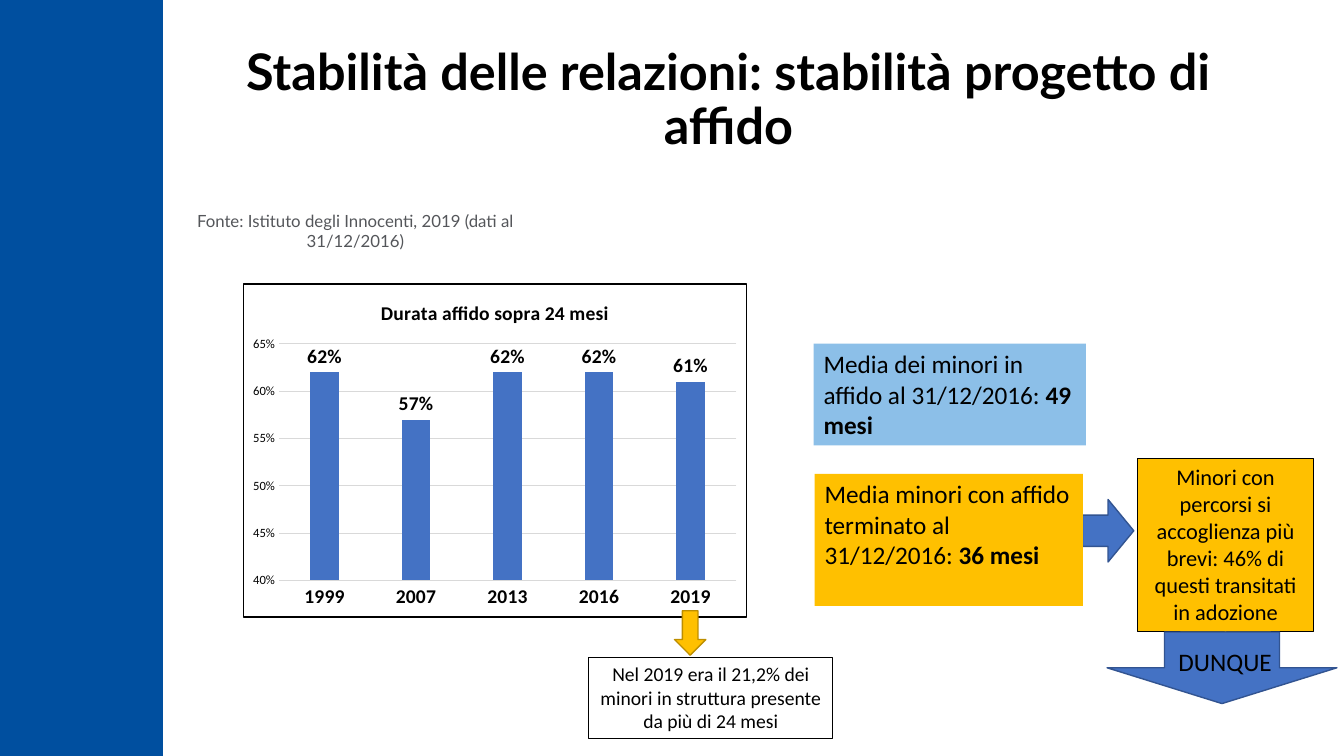
from dataclasses import dataclass

from lxml import etree
from pptx import Presentation
from pptx.chart.data import CategoryChartData
from pptx.dml.color import RGBColor
from pptx.enum.chart import XL_CHART_TYPE as ChartType
from pptx.enum.chart import XL_LABEL_POSITION as LabelPos
from pptx.enum.chart import XL_TICK_MARK as Tick
from pptx.enum.shapes import MSO_SHAPE as Preset
from pptx.enum.text import MSO_ANCHOR as Anchor
from pptx.enum.text import PP_ALIGN as Align
from pptx.oxml import parse_xml
from pptx.oxml.ns import nsdecls, qn
from pptx.util import Inches, Pt


@dataclass(frozen=True)
class Theme:
    band: str = "004F9F"
    white: str = "FFFFFF"
    ink: str = "000000"
    muted: str = "54565A"
    grid: str = "D9D9D9"
    blue: str = "4472C4"
    blue_edge: str = "325491"
    sky: str = "8CBFE8"
    amber: str = "FFC000"
    amber_edge: str = "BD8E00"
    heading_face: str = "Lato"
    body_face: str = "Calibri"
    title: int = 36
    large: int = 18
    medium: int = 16
    label: int = 14
    source: int = 12
    axis: int = 9


THEME = Theme()


def style_font(font, size, color=THEME.ink, face=THEME.body_face, bold=False):
    font.size, font.name, font.bold = Pt(size), face, bold
    font.color.rgb = RGBColor.from_string(color)


def add_block(slide, box, preset=Preset.RECTANGLE, fill=None, edge=None, weight=1):
    block = slide.shapes.add_shape(preset, *map(Inches, box))
    block.shadow.inherit = False
    if fill:
        block.fill.solid()
        block.fill.fore_color.rgb = RGBColor.from_string(fill)
    else:
        block.fill.background()
    if edge:
        block.line.color.rgb = RGBColor.from_string(edge)
        block.line.width = Pt(weight)
    else:
        block.line.fill.background()
    return block


def write(shape, text, size, strong="", align=Align.LEFT, anchor=Anchor.TOP, **font):
    """Write one paragraph, with an optional bold ending."""
    frame = shape.text_frame
    frame.word_wrap = True
    frame.vertical_anchor = anchor
    paragraph = frame.paragraphs[0]
    paragraph.alignment = align
    paragraph.add_run().text = text
    style_font(paragraph.font, size, **font)
    if strong:
        ending = paragraph.add_run()
        ending.text = strong
        ending.font.bold = True
    return paragraph


def add_label(slide, box, text, size, **options):
    return write(slide.shapes.add_textbox(*map(Inches, box)), text, size, **options)


def add_header(slide, left, top, width):
    heading = add_label(slide, (left, top, width, 1.69),
                        "Stabilità delle relazioni: stabilità progetto di affido",
                        THEME.title, align=Align.CENTER, anchor=Anchor.MIDDLE,
                        face=THEME.heading_face, bold=True)
    heading.line_spacing = 0.9
    add_label(slide, (left, top + 1.88, 3.65, 0.5),
              "Fonte: Istituto degli Innocenti, 2019 (dati al 31/12/2016)",
              THEME.source, align=Align.CENTER, color=THEME.muted,
              face=THEME.heading_face)


def frame_chart(chart):
    """Give the chart a white ground, a black border and a fixed plot area."""
    space = chart.element
    space.find(qn("c:chart")).addnext(parse_xml(
        f'<c:spPr {nsdecls("c", "a")}>'
        f'<a:solidFill><a:srgbClr val="{THEME.white}"/></a:solidFill>'
        f'<a:ln w="12700"><a:solidFill><a:srgbClr val="{THEME.ink}"/></a:solidFill></a:ln>'
        '</c:spPr>'))
    plot_area = space.find(".//" + qn("c:plotArea"))
    layout = plot_area.find(qn("c:layout"))
    if layout is None:
        layout = etree.Element(qn("c:layout"))
        plot_area.insert(0, layout)
    manual = etree.SubElement(layout, qn("c:manualLayout"))
    places = {"layoutTarget": "inner", "xMode": "edge", "yMode": "edge",
              "x": "0.07", "y": "0.18", "w": "0.91", "h": "0.71"}
    for tag, value in places.items():
        etree.SubElement(manual, qn("c:" + tag)).set("val", value)


def add_duration_chart(slide, box):
    data = CategoryChartData(number_format="0%")
    data.categories = ["1999", "2007", "2013", "2016", "2019"]
    data.add_series("Series 1", (0.62, 0.57, 0.62, 0.62, 0.61))
    chart = slide.shapes.add_chart(ChartType.COLUMN_CLUSTERED,
                                   *map(Inches, box), data).chart
    style_font(chart.font, 10)
    chart.has_legend = False
    chart.has_title = True
    heading = chart.chart_title.text_frame.paragraphs[0]
    heading.add_run().text = "Durata affido sopra 24 mesi"
    style_font(heading.font, THEME.label, bold=True)
    chart.chart_title.include_in_layout = False

    # Columns and their labels
    plot = chart.plots[0]
    plot.gap_width, plot.overlap, plot.vary_by_categories = 219, -27, False
    columns = plot.series[0]
    columns.format.fill.solid()
    columns.format.fill.fore_color.rgb = RGBColor.from_string(THEME.blue)
    labels = columns.data_labels
    labels.show_value = True
    labels.position = LabelPos.OUTSIDE_END
    style_font(labels.font, THEME.label, bold=True)

    # Axes
    years, shares = chart.category_axis, chart.value_axis
    for axis in (years, shares):
        axis.major_tick_mark = axis.minor_tick_mark = Tick.NONE
    style_font(years.tick_labels.font, THEME.label, bold=True)
    style_font(shares.tick_labels.font, THEME.axis)
    shares.minimum_scale, shares.maximum_scale, shares.major_unit = 0.4, 0.65, 0.05
    shares.tick_labels.number_format = "0%"
    shares.tick_labels.number_format_is_linked = False
    shares.format.line.fill.background()
    for line in (years.format.line, shares.major_gridlines.format.line):
        line.color.rgb = RGBColor.from_string(THEME.grid)
        line.width = Pt(0.75)
    frame_chart(chart)


def add_chart_note(slide, left, top):
    note = add_block(slide, (left, top + 0.46, 2.42, 0.81), edge=THEME.ink, weight=0.75)
    write(note, "Nel 2019 era il 21,2% dei minori in struttura presente da più di 24 mesi",
          THEME.label, align=Align.CENTER)
    add_block(slide, (left + 0.85, top, 0.31, 0.44), Preset.DOWN_ARROW,
              THEME.amber, THEME.amber_edge)


def add_averages(slide, left, top):
    current = add_block(slide, (left, top, 2.7, 1.01), fill=THEME.sky)
    write(current, "Media dei minori in affido al 31/12/2016: ", THEME.large, "49 mesi")
    sideways = add_block(slide, (left + 2.61, top + 1.6, 0.62, 0.51), Preset.DOWN_ARROW,
                         THEME.blue, THEME.blue_edge)
    sideways.rotation = 270
    ended = add_block(slide, (left + 0.01, top + 1.29, 2.66, 1.31), fill=THEME.amber)
    write(ended, "Media minori con affido terminato al 31/12/2016: ", THEME.large, "36 mesi")


def add_outcome(slide, left, top):
    adopted = add_block(slide, (left, top, 1.75, 1.72), fill=THEME.amber,
                        edge=THEME.ink, weight=0.75)
    write(adopted, "Minori con percorsi si accoglienza più brevi: "
          "46% di questi transitati in adozione", THEME.medium, align=Align.CENTER)
    add_block(slide, (left - 0.3, top + 1.72, 2.28, 0.71), Preset.DOWN_ARROW,
              THEME.blue, THEME.blue_edge)
    add_label(slide, (left + 0.31, top + 1.81, 1.2, 0.4), "DUNQUE", THEME.large)


def main():
    deck = Presentation()
    deck.slide_width, deck.slide_height = Inches(13.33), Inches(7.5)
    slide = deck.slides.add_slide(deck.slide_layouts[6])
    add_block(slide, (0, 0, 1.61, 7.5), fill=THEME.band, edge=THEME.band)
    add_header(slide, 1.7, 0.16, 11.05)
    add_duration_chart(slide, (2.41, 2.81, 5, 3.32))
    add_chart_note(slide, 5.84, 6.06)
    add_averages(slide, 8.07, 3.41)
    add_outcome(slide, 11.28, 4.55)
    deck.save("out.pptx")


if __name__ == "__main__":
    main()
